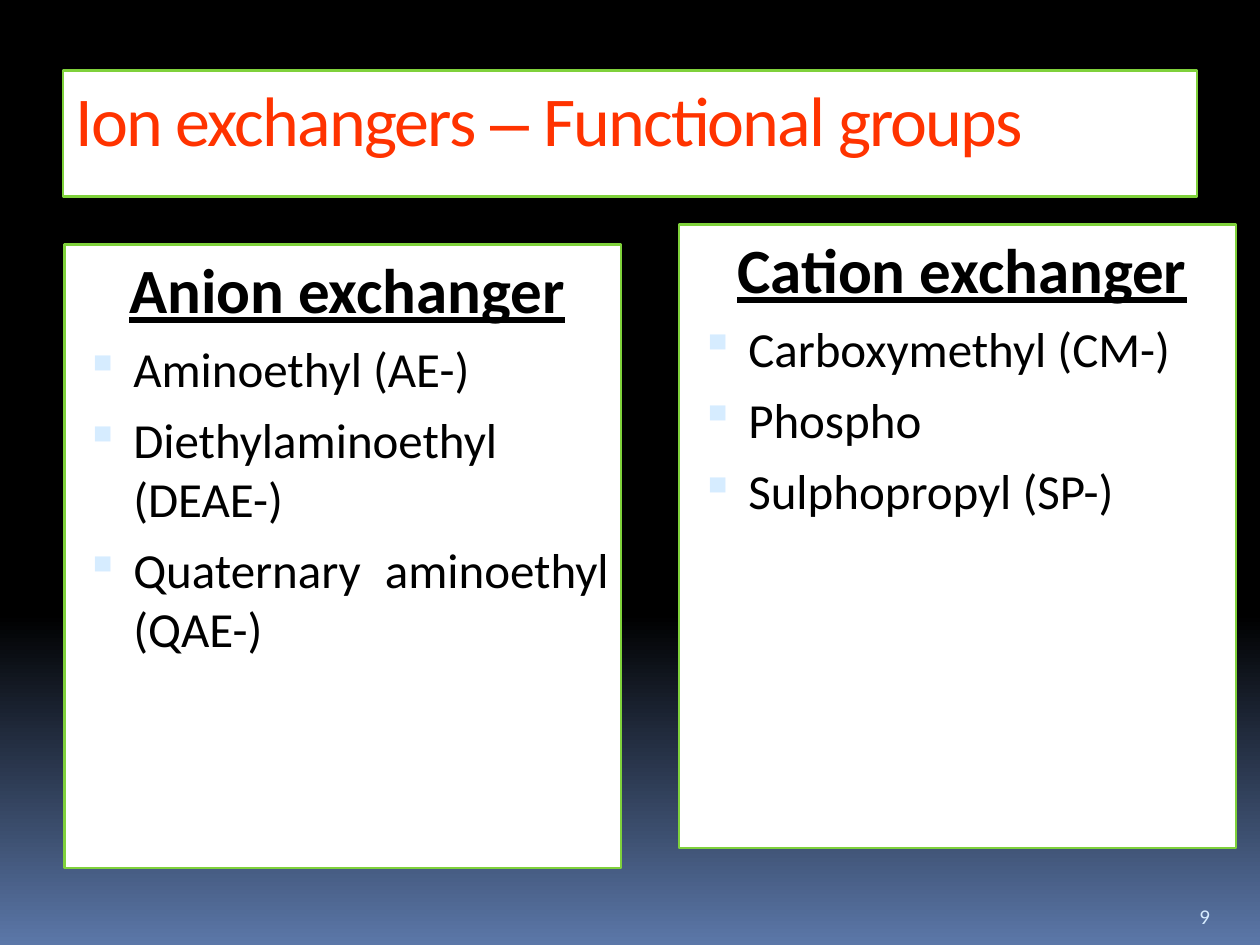
from collections import namedtuple

from lxml.etree import SubElement
from pptx import Presentation
from pptx.dml.color import RGBColor
from pptx.enum.shapes import MSO_SHAPE as Preset
from pptx.enum.text import MSO_ANCHOR as Anchor, PP_ALIGN as Align
from pptx.oxml.ns import qn
from pptx.util import Inches, Pt

COLORS = {
    "black": "000000",
    "dusk": "5B77A8",
    "panel": "FFFFFF",
    "border": "7FD13B",
    "title": "FF3300",
    "pale": "D6ECFF",
}
FONT = "Calibri"

# The slide is a grid of 100 columns by 75 rows
COLUMNS, ROWS = 100, 75
CELL = Inches(0.1)
Box = namedtuple("Box", "left top width height")


def color(name):
    return RGBColor.from_string(COLORS[name])


def on_grid(box):
    return [round(units * CELL) for units in box]


def style_font(font, size, color_name, **flags):
    font.name, font.size = FONT, Pt(size)
    font.color.rgb = color(color_name)
    for flag, value in flags.items():
        setattr(font, flag, value)


def paint_background(slide):
    fill = slide.background.fill
    fill.gradient()
    fill.gradient_angle = 270
    stops = slide.background._cSld.find(".//" + qn("a:gsLst"))
    stops.clear()
    for percent, name in ((0, "black"), (65, "black"), (100, "dusk")):
        stop = SubElement(stops, qn("a:gs"), pos=str(percent * 1000))
        SubElement(stop, qn("a:srgbClr"), val=COLORS[name])


def add_panel(slide, box):
    """Add a white framed box and return its text frame."""
    shape = slide.shapes.add_shape(Preset.RECTANGLE, *on_grid(box))
    shape.shadow.inherit = False
    shape.fill.solid()
    shape.fill.fore_color.rgb = color("panel")
    shape.line.color.rgb = color("border")
    shape.line.width = Pt(1.5)
    frame = shape.text_frame
    frame.word_wrap = True
    frame.vertical_anchor = Anchor.TOP
    return frame


def add_title(slide, box):
    paragraph = add_panel(slide, box).paragraphs[0]
    paragraph.alignment = Align.LEFT
    for text, font_name in (("Ion exchangers ", FONT), ("–", "Arial"),
                            (" Functional groups", FONT)):
        run = paragraph.add_run()
        run.text = text
        style_font(run.font, 40, "title")
        run.font.name = font_name
        run.font._element.set("spc", "-100")


def set_indent(paragraph):
    properties = paragraph._p.get_or_add_pPr()
    properties.set("marL", str(Inches(0.45)))
    properties.set("indent", str(Inches(-0.38)))
    return properties


def add_bullet(paragraph):
    properties = set_indent(paragraph)
    bullet_color = SubElement(properties, qn("a:buClr"))
    SubElement(bullet_color, qn("a:srgbClr"), val=COLORS["pale"])
    SubElement(properties, qn("a:buSzPct"), val="95000")
    SubElement(properties, qn("a:buChar"), char="▪")


def add_group_list(slide, box, heading, groups, alignment):
    frame = add_panel(slide, box)

    # Heading
    paragraph = frame.paragraphs[0]
    set_indent(paragraph)
    paragraph.text = heading
    paragraph.alignment = Align.CENTER
    style_font(paragraph.font, 36, "black", bold=True, underline=True)

    # Functional groups
    for group in groups:
        paragraph = frame.add_paragraph()
        add_bullet(paragraph)
        paragraph.text = group
        paragraph.alignment = alignment
        paragraph.space_before = Pt(7)
        style_font(paragraph.font, 28, "black")


def add_page_number(slide, box, number):
    frame = slide.shapes.add_textbox(*on_grid(box)).text_frame
    frame.word_wrap = True
    frame.vertical_anchor = Anchor.BOTTOM
    paragraph = frame.paragraphs[0]
    paragraph.text = str(number)
    style_font(paragraph.font, 12, "pale")


def main():
    presentation = Presentation()
    presentation.slide_width = COLUMNS * CELL
    presentation.slide_height = ROWS * CELL
    slide = presentation.slides.add_slide(presentation.slide_layouts[6])

    paint_background(slide)
    add_title(slide, Box(5, 5.6, 90, 10))
    add_group_list(
        slide, Box(5.1, 19.4, 44.2, 49.5), "Anion exchanger",
        ["Aminoethyl (AE-)", "Diethylaminoethyl (DEAE-)",
         "Quaternary aminoethyl (QAE-)"], Align.JUSTIFY)
    add_group_list(
        slide, Box(53.9, 17.8, 44.2, 49.5), "Cation exchanger",
        ["Carboxymethyl (CM-)", "Phospho", "Sulphopropyl (SP-)"], Align.LEFT)
    add_page_number(slide, Box(94.2, 70.2, 5, 4), 9)

    presentation.save("out.pptx")


if __name__ == "__main__":
    main()
